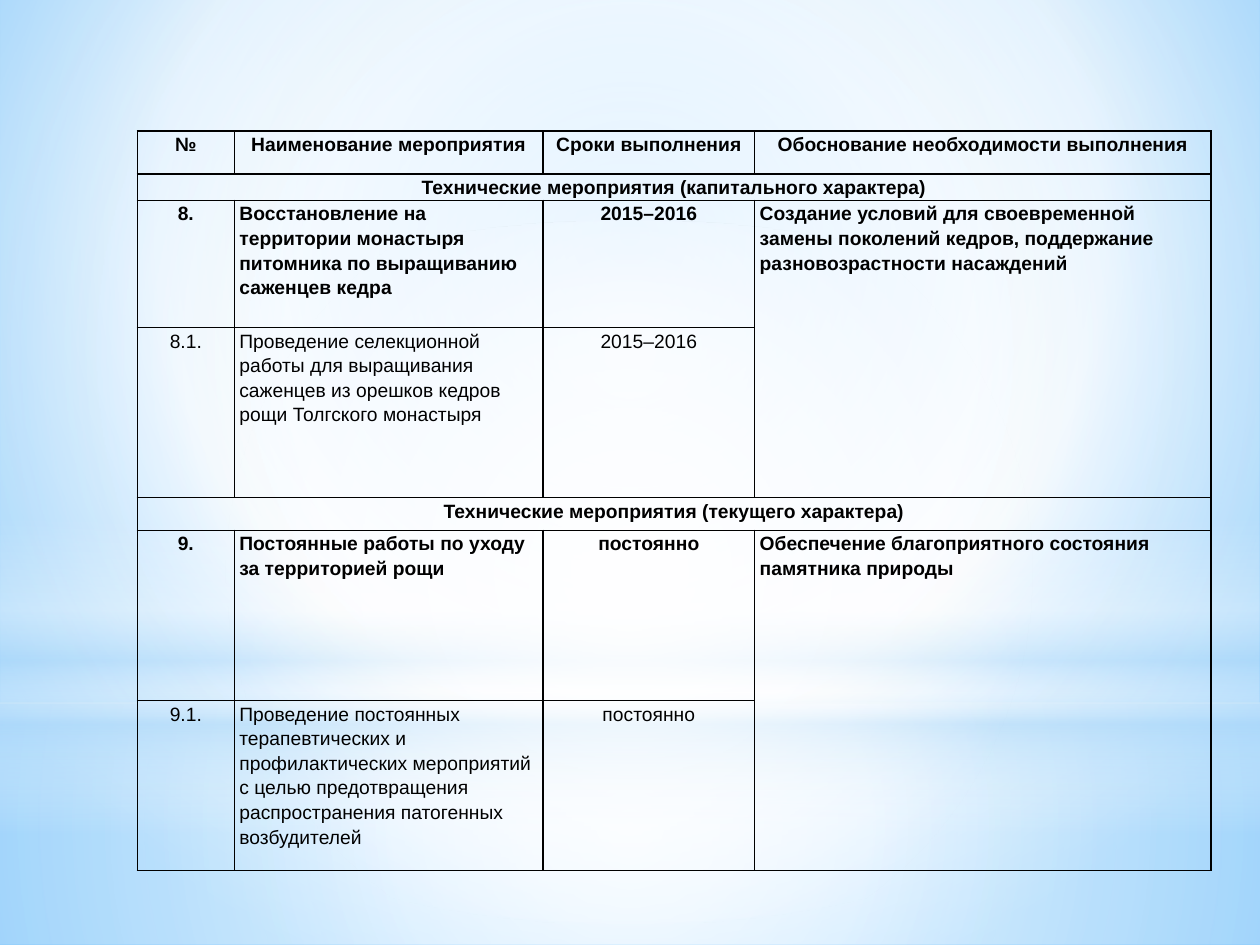
from pptx import Presentation
from pptx.dml.color import RGBColor
from pptx.enum.shapes import MSO_SHAPE as Shape
from pptx.enum.text import PP_ALIGN as Align
from pptx.oxml import parse_xml
from pptx.oxml.ns import nsdecls
from pptx.util import Inches, Pt

COLORS = {
    "ink": "000000",
    "white": "FFFFFF",
    "haze": "B4DCFA",
    "sky": "9ED5FF",
    "deep": "5BB9FF",
}
CENTER = (50, 50, 50, 50)
COLUMNS = (0.77, 2.45, 1.68, 3.62)
HEIGHTS = (0.34, 0.21, 1.01, 1.35, 0.26, 1.35, 1.35)
ROWS = (
    ("№", "Наименование мероприятия", "Сроки выполнения",
     "Обоснование необходимости выполнения"),
    ("Технические мероприятия (капитального характера)",),
    ("8.",
     "Восстановление на территории монастыря питомника по выращиванию саженцев кедра",
     "2015–2016",
     "Создание условий для своевременной замены поколений кедров, "
     "поддержание разновозрастности насаждений"),
    ("8.1.",
     "Проведение селекционной работы для выращивания саженцев из орешков кедров "
     "рощи Толгского монастыря",
     "2015–2016"),
    ("Технические мероприятия (текущего характера)",),
    ("9.", "Постоянные работы по уходу за территорией рощи", "постоянно",
     "Обеспечение благоприятного состояния памятника природы"),
    ("9.1.",
     "Проведение постоянных терапевтических и профилактических мероприятий "
     "с целью предотвращения распространения патогенных возбудителей",
     "постоянно"),
)


def paint_gradient(owner, stops, focus=None):
    """Fill a shape or background with a radial gradient, or a vertical one without focus."""
    owner_fill = owner.background.fill if hasattr(owner, "background") else owner.fill
    owner_fill.solid()
    stop_xml = "".join(
        f'<a:gs pos="{position * 1000}"><a:srgbClr val="{COLORS[color]}">'
        f'<a:alpha val="{opacity * 1000}"/></a:srgbClr></a:gs>'
        for position, color, opacity in stops
    )
    if focus:
        sides = " ".join(f'{side}="{value * 1000}"' for side, value in zip("ltrb", focus))
        direction = f'<a:path path="circle"><a:fillToRect {sides}/></a:path>'
    else:
        direction = '<a:lin ang="5400000" scaled="0"/>'
    gradient = parse_xml(
        f'<a:gradFill {nsdecls("a")} rotWithShape="1"><a:gsLst>{stop_xml}</a:gsLst>'
        f"{direction}</a:gradFill>"
    )
    solid = owner.element.xpath(".//a:solidFill")[0]
    solid.getparent().replace(solid, gradient)


def add_glow(page, kind, box, stops, focus=None):
    """Place one translucent, borderless gradient shape in the box."""
    glow = page.shapes.add_shape(kind, *map(Inches, box))
    glow.shadow.inherit = False
    glow.line.fill.background()
    paint_gradient(glow, stops, focus)


def add_backdrop(page, width, height):
    """Paint the sky background and its layers of light."""
    horizon = 5.58
    paint_gradient(page, [(0, "sky", 100), (60, "white", 100), (100, "deep", 100)],
                   (20, 10, 20, 60))
    add_glow(page, Shape.RECTANGLE, (0, horizon, width, height - horizon),
             [(0, "white", 91), (37, "white", 76), (100, "haze", 79)], CENTER)
    add_glow(page, Shape.RECTANGLE, (0, 0, width, horizon),
             [(0, "white", 89), (48, "white", 62), (100, "haze", 79)], CENTER)
    add_glow(page, Shape.RECTANGLE, (0, 4.12, width, 2.5),
             [(0, "white", 0), (29, "white", 30), (45, "haze", 40),
              (55, "white", 26), (65, "haze", 60), (100, "white", 0)])
    add_glow(page, Shape.OVAL, (0, 1.75, width, horizon),
             [(0, "white", 100), (56, "white", 0)], CENTER)


def style_cell(cell):
    """Give a cell thin borders, narrow margins and no fill."""
    properties = cell._tc.get_or_add_tcPr()
    for side in "LRTB":
        properties.append(parse_xml(
            f'<a:ln{side} {nsdecls("a")} w="{Pt(1)}"><a:solidFill>'
            f'<a:srgbClr val="{COLORS["ink"]}"/></a:solidFill></a:ln{side}>'
        ))
    cell.fill.background()
    cell.margin_left = cell.margin_right = Inches(0.04)
    cell.margin_top = cell.margin_bottom = 0


def write_cell(cell, text, align, bold):
    """Write one paragraph into a cell."""
    para = cell.text_frame.paragraphs[0]
    para.alignment = align
    para.line_spacing = 1.15
    span = para.add_run()
    span.text = text
    span.font.name = "Arial"
    span.font.size = Pt(11)
    span.font.bold = bold
    span.font.color.rgb = RGBColor.from_string(COLORS["ink"])


def add_plan_table(page, box):
    """Build the table of planned measures in the box."""
    table = page.shapes.add_table(len(ROWS), len(COLUMNS), *map(Inches, box)).table
    table.first_row = table.horz_banding = False
    for column, width in zip(table.columns, COLUMNS):
        column.width = Inches(width)
    for row, height in zip(table.rows, HEIGHTS):
        row.height = Inches(height)
    for cell in table.iter_cells():
        style_cell(cell)
    last = len(COLUMNS) - 1
    for index, texts in enumerate(ROWS):
        if len(texts) == 1:
            table.cell(index, 0).merge(table.cell(index, last))
        elif len(texts) == last:
            table.cell(index - 1, last).merge(table.cell(index, last))
        for column, text in enumerate(texts):
            centered = index == 0 or column in (0, 2)
            write_cell(table.cell(index, column), text,
                       Align.CENTER if centered else Align.LEFT, len(texts) != last)


def main():
    """Build and save the deck."""
    width, height = 10, 7.5
    deck = Presentation()
    deck.slide_width, deck.slide_height = Inches(width), Inches(height)
    page = deck.slides.add_slide(deck.slide_layouts[6])
    add_backdrop(page, width, height)
    add_plan_table(page, (1.09, 1.04, sum(COLUMNS), sum(HEIGHTS)))
    deck.save("out.pptx")


if __name__ == "__main__":
    main()
